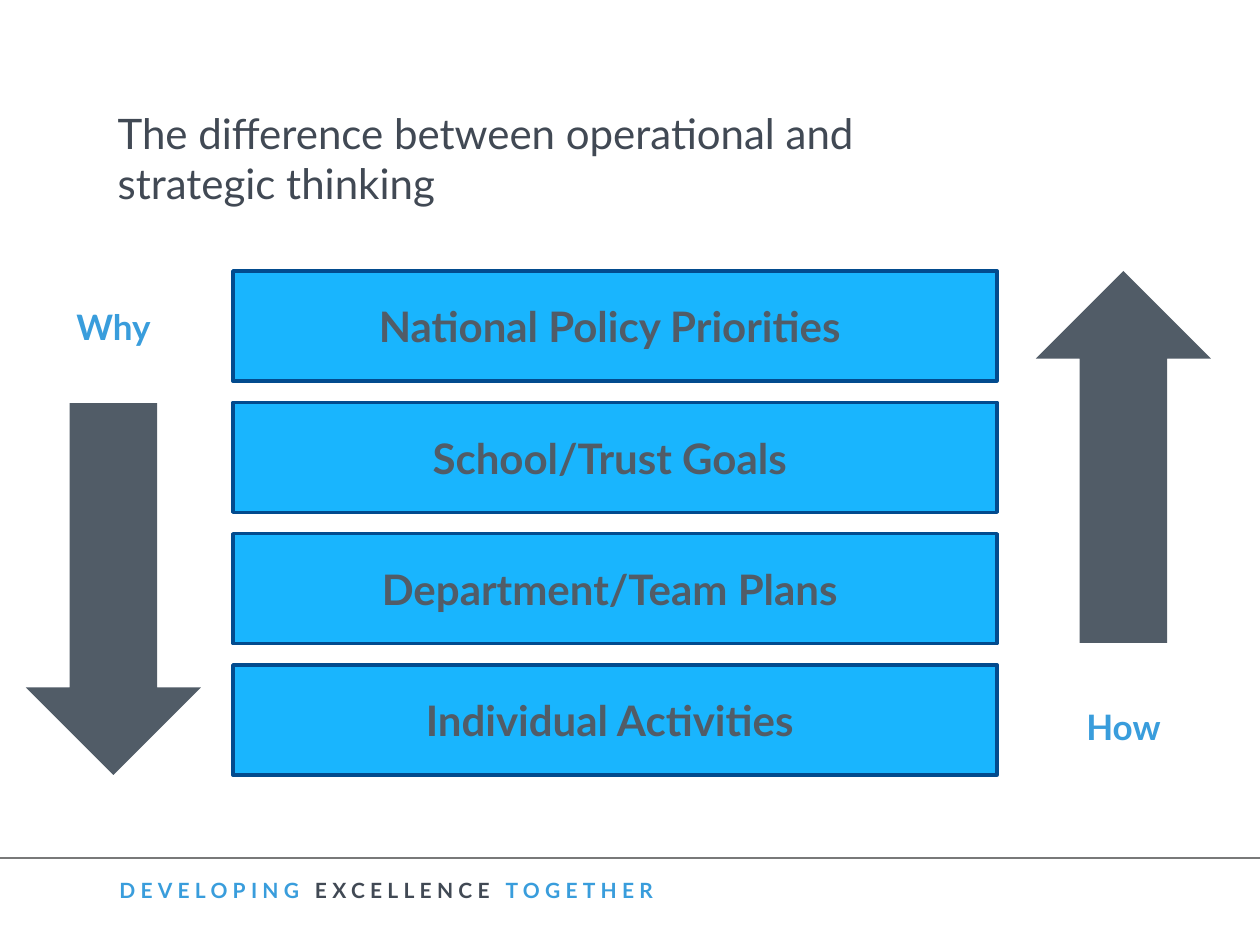
from collections import namedtuple
from dataclasses import dataclass

from lxml import etree
from pptx import Presentation
from pptx import util as u
from pptx.dml.color import RGBColor
from pptx.enum import shapes, text
from pptx.oxml import ns

Box = namedtuple("Box", "left top width height")


@dataclass(frozen=True)
class Theme:
    font: str = "Lato"
    ink: str = "414954"
    slate: str = "515C67"
    accent: str = "399DDC"
    bar: str = "19B5FE"
    outline: str = "024B8E"
    rule: str = "787979"
    heading: int = 24
    label: int = 20
    footer: int = 12


THEME = Theme()
LEVELS = [
    "National Policy Priorities",
    "School/Trust Goals",
    "Department/Team Plans",
    "Individual Activities",
]
MOTTO = [
    ("DEVELOPING", THEME.accent),
    (" EXCELLENCE ", THEME.ink),
    ("TOGETHER", THEME.accent),
]


def px(length):
    return u.Emu(round(length * 914400 / 126))


def place(box):
    return [px(length) for length in box]


def color(value):
    return RGBColor.from_string(value)


def style(para, size, tint, bold=True, align=text.PP_ALIGN.CENTER):
    para.alignment = align
    para.font.name = THEME.font
    para.font.size = u.Pt(size)
    para.font.bold = bold
    para.font.color.rgb = color(tint)


def add_block(page, kind, box, fill):
    block = page.shapes.add_shape(kind, *place(box))
    block.shadow.inherit = False
    block.fill.solid()
    block.fill.fore_color.rgb = color(fill)
    block.line.fill.background()
    return block


def add_label(page, box, words):
    frame = page.shapes.add_textbox(*place(box)).text_frame
    frame.word_wrap = True
    frame.text = words
    style(frame.paragraphs[0], THEME.label, THEME.accent)


def add_title(page, box, words):
    title = page.shapes.title
    title.left, title.top, title.width, title.height = place(box)
    frame = title.text_frame
    frame.text = words
    frame.word_wrap = True
    frame.auto_size = text.MSO_AUTO_SIZE.NONE
    frame.vertical_anchor = text.MSO_ANCHOR.MIDDLE
    style(frame.paragraphs[0], THEME.heading, THEME.ink, False, text.PP_ALIGN.LEFT)


def add_levels(page, box, names, height=110):
    pitch = (box.height - height) / (len(names) - 1)
    for index, name in enumerate(names):
        area = Box(box.left, box.top + index * pitch, box.width, height)
        bar = add_block(page, shapes.MSO_SHAPE.RECTANGLE, area, THEME.bar)
        bar.line.color.rgb = color(THEME.outline)
        bar.line.width = u.Pt(2)
        frame = bar.text_frame
        frame.margin_right = px(23)
        frame.text = name
        style(frame.paragraphs[0], THEME.heading, THEME.slate)


def add_direction(page, box, words, label_top, arrow_top, kind):
    label_width = 147
    inset = (box.width - label_width) / 2
    add_label(page, Box(box.left + inset, box.top + label_top, label_width, 55), words)
    arrow = Box(box.left, box.top + arrow_top, box.width, 372)
    add_block(page, kind, arrow, THEME.slate)


def add_footer(page, box):
    right = box.left + box.width
    rule = page.shapes.add_connector(
        shapes.MSO_CONNECTOR.STRAIGHT, *place((box.left, box.top, right, box.top))
    )
    rule.line.color.rgb = color(THEME.rule)
    rule.line.width = u.Pt(0.75)
    etree.SubElement(rule.element.spPr, ns.qn("a:effectLst"))

    motto = Box(box.left + 107, box.top + 13, 685, 55)
    frame = page.shapes.add_textbox(*place(motto)).text_frame
    frame.word_wrap = False
    para = frame.paragraphs[0]
    style(para, THEME.footer, THEME.accent, align=text.PP_ALIGN.LEFT)
    for words, tint in MOTTO:
        span = para.add_run()
        span.text = words
        span.font.color.rgb = color(tint)
        span.font._element.set("spc", "300")


def main():
    deck = Presentation()
    deck.slide_width, deck.slide_height = px(1260), px(945)
    page = deck.slides.add_slide(deck.slide_layouts.get_by_name("Title Only"))
    add_footer(page, Box(0, 858, 1260, 87))
    add_title(
        page,
        Box(105, 118, 853, 79),
        "The difference between operational and strategic thinking",
    )
    add_levels(page, Box(233, 271, 764, 504), LEVELS)
    add_direction(
        page, Box(26, 271, 175, 504), "Why", 28, 132, shapes.MSO_SHAPE.DOWN_ARROW
    )
    add_direction(
        page, Box(1036, 271, 175, 504), "How", 428, 0, shapes.MSO_SHAPE.UP_ARROW
    )
    deck.save("out.pptx")


if __name__ == "__main__":
    main()
